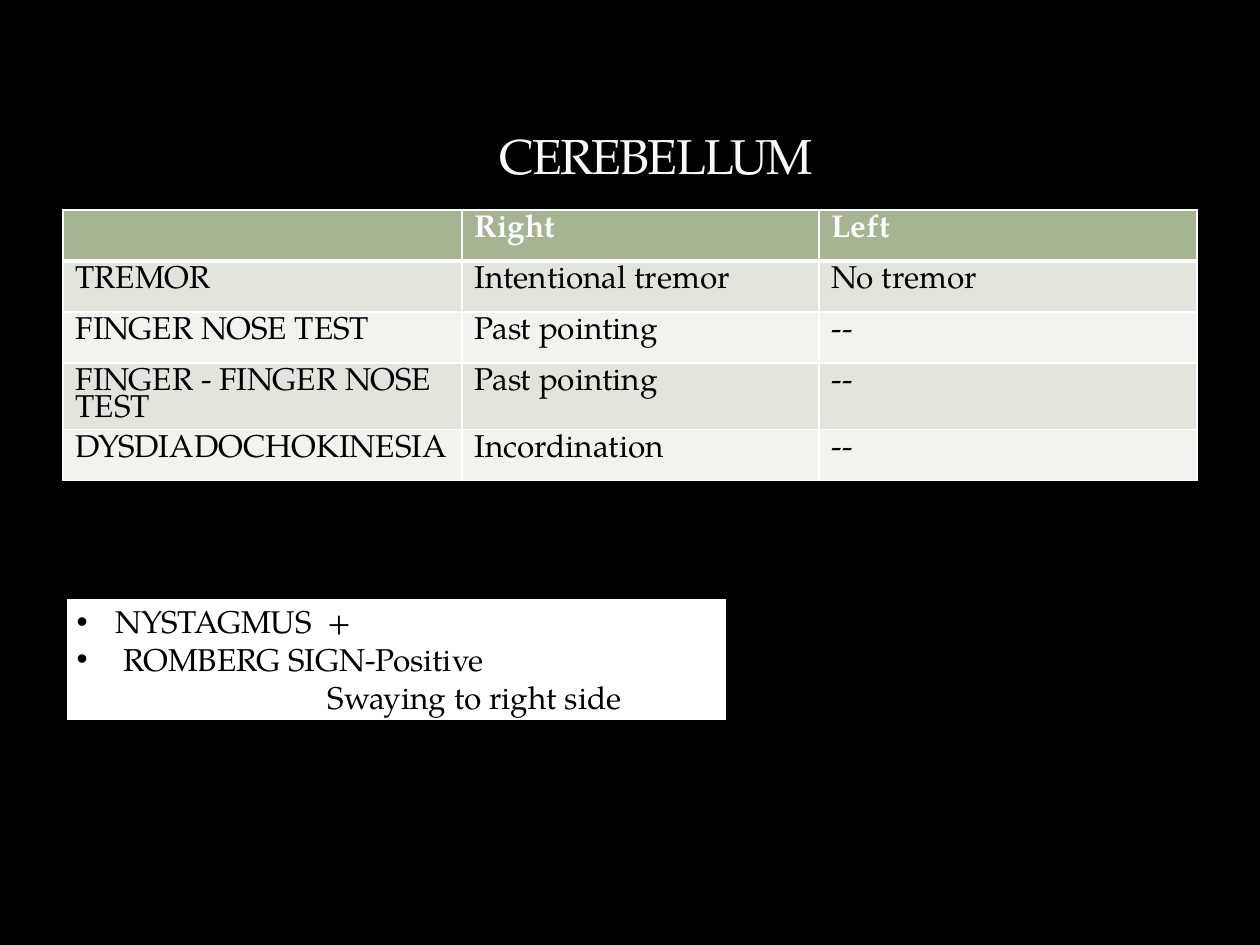
from lxml import etree
from pptx import Presentation
from pptx import util as u
from pptx.dml.color import RGBColor
from pptx.enum import text
from pptx.oxml.ns import qn

SCALE = 914400 / 126
FONT = "TeX Gyre Pagella"
COLORS = {
    "black": "000000",
    "white": "FFFFFF",
    "title": "F9F9F9",
    "header": "A5B592",
    "band_dark": "E1E5DC",
    "band_light": "F0F3EE",
}
ROWS = [
    ("", "Right", "Left"),
    ("TREMOR", "Intentional tremor", "No tremor"),
    ("FINGER NOSE TEST", "Past pointing", "--"),
    ("FINGER - FINGER NOSE TEST", "Past pointing", "--"),
    ("DYSDIADOCHOKINESIA", "Incordination", "--"),
]
COLUMN_WIDTHS = (399, 357, 378)
ROW_HEIGHT = 51
SIGNS = [
    ("NYSTAGMUS  +", 39, True),
    ("ROMBERG SIGN-Positive", 47, True),
    ("Swaying to right side", 251, False),
]


def px(n):
    """Turn pixels into EMU."""
    return u.Emu(round(n * SCALE))


def rgb(name):
    """Look up a named colour."""
    return RGBColor.from_string(COLORS[name])


def paint(fill, color):
    """Apply a solid fill."""
    fill.solid()
    fill.fore_color.rgb = rgb(color)


def place(sp, left, top, width, height):
    """Move and size a shape."""
    sp.left, sp.top, sp.width, sp.height = map(px, (left, top, width, height))


def add_text(p, value, size=18, color="black", bold=False, spacing=None):
    """Add a formatted run to a paragraph."""
    r = p.add_run()
    r.text = value
    r.font.name, r.font.size, r.font.bold = FONT, u.Pt(size), bold
    r.font.color.rgb = rgb(color)
    if spacing is not None:
        r._r.get_or_add_rPr().set("spc", str(spacing * 100))


def add_title(sp):
    """Fill the title placeholder."""
    place(sp, 63, 21, 1134, 168)
    tf = sp.text_frame
    tf.auto_size = text.MSO_AUTO_SIZE.NONE
    tf.vertical_anchor = text.MSO_ANCHOR.BOTTOM
    tf.margin_bottom = 0
    p = tf.paragraphs[0]
    p.alignment = text.PP_ALIGN.CENTER
    add_text(p, "\t", size=42, color="title", spacing=-1)
    add_text(p, "CEREBELLUM ", size=28, color="title", spacing=-1)


def set_border(cell, side, width):
    """Draw one white cell border."""
    tcPr = cell._tc.get_or_add_tcPr()
    ln = etree.SubElement(tcPr, qn(f"a:ln{side}"), w=str(u.Pt(width)))
    fill = etree.SubElement(ln, qn("a:solidFill"))
    etree.SubElement(fill, qn("a:srgbClr"), val=COLORS["white"])


def format_cell(cell, value, fill, header, below_header):
    """Write and style one table cell."""
    for side in "LRTB":
        thick = (header and side == "B") or (below_header and side == "T")
        set_border(cell, side, 3 if thick else 1)
    paint(cell.fill, fill)
    p = cell.text_frame.paragraphs[0]
    p.line_spacing = 0.85
    if value:
        add_text(p, value, color="white" if header else "black", bold=header)


def add_findings(slide):
    """Add the table of findings by side."""
    frame = slide.shapes.add_table(
        len(ROWS), len(COLUMN_WIDTHS), px(63), px(210),
        px(sum(COLUMN_WIDTHS)), px(ROW_HEIGHT * len(ROWS)))
    table = frame.table
    for column, width in zip(table.columns, COLUMN_WIDTHS):
        column.width = px(width)
    for i, values in enumerate(ROWS):
        table.rows[i].height = px(ROW_HEIGHT)
        band = "band_dark" if i % 2 else "band_light"
        for j, value in enumerate(values):
            format_cell(table.cell(i, j), value, band if i else "header",
                        header=i == 0, below_header=i == 1)


def set_bullet(p, indent, bullet):
    """Set the indent and bullet of a paragraph."""
    pPr = p._p.get_or_add_pPr()
    pPr.set("marL", str(px(indent)))
    pPr.set("indent", str(-px(indent) if bullet else 0))
    if bullet:
        etree.SubElement(pPr, qn("a:buFont"), typeface="Arial")
        etree.SubElement(pPr, qn("a:buChar"), char="•")
    else:
        etree.SubElement(pPr, qn("a:buNone"))


def add_signs(sp):
    """Fill the body placeholder with the list of signs."""
    place(sp, 64, 596, 665, 127)
    paint(sp.fill, "white")
    sp.line.color.rgb = rgb("black")
    sp.line.width = u.Pt(3)
    tf = sp.text_frame
    tf.auto_size = text.MSO_AUTO_SIZE.NONE
    tf.vertical_anchor = text.MSO_ANCHOR.TOP
    for i, (value, indent, bullet) in enumerate(SIGNS):
        p = tf.add_paragraph() if i else tf.paragraphs[0]
        p.space_before = p.space_after = u.Pt(0)
        p.line_spacing = 1.0
        set_bullet(p, indent, bullet)
        add_text(p, value)


def main():
    """Build and save the slide."""
    prs = Presentation()
    prs.slide_width, prs.slide_height = px(1260), px(945)
    slide = prs.slides.add_slide(prs.slide_layouts[1])
    paint(slide.background.fill, "black")
    add_title(slide.shapes.title)
    add_findings(slide)
    add_signs(slide.placeholders[1])
    prs.save("out.pptx")


if __name__ == "__main__":
    main()
